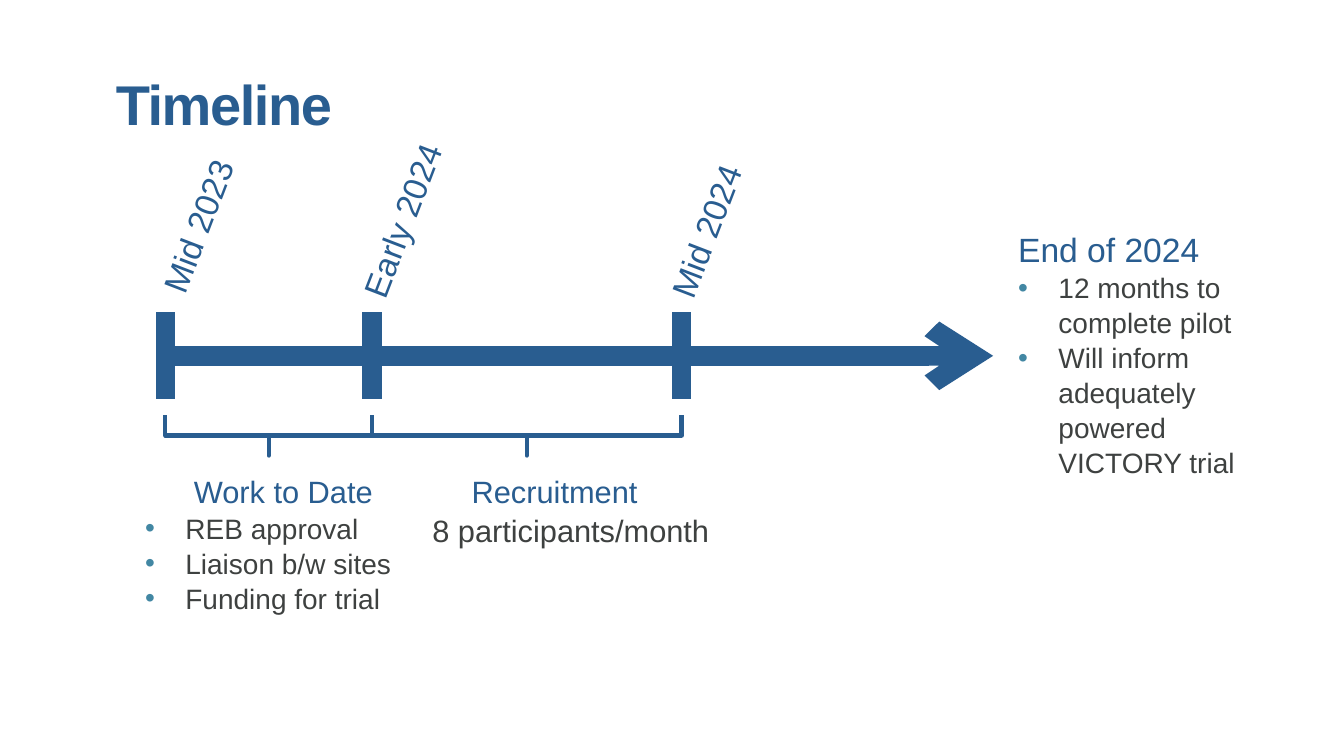
from dataclasses import dataclass

from lxml import etree
from pptx import Presentation
from pptx import util as u
from pptx.dml.color import RGBColor
from pptx.enum import shapes, text
from pptx.oxml import ns


@dataclass(frozen=True)
class Theme:
    font: str = "Arial"
    blue: str = "295D90"
    body: str = "3E4140"
    bullet: str = "4287A3"
    title_size: int = 40
    date_size: int = 24
    phase_size: int = 22
    item_size: int = 20
    axis_width: int = 14
    brace_width: int = 3
    line_spacing: float = 1.04


THEME = Theme()


def add_xml(parent, tag, **attributes):
    return etree.SubElement(parent, ns.qn(tag), attributes)


def text_frame(slide, left, top, width, height, rotation=0, wrap=True):
    box = slide.shapes.add_textbox(*map(u.Inches, (left, top, width, height)))
    box.rotation = rotation
    box.text_frame.word_wrap = wrap
    return box.text_frame


def write(frame, words, size, color=THEME.body, bold=False, bullet=False,
          indent=0, align=text.PP_ALIGN.LEFT, tracking=None):
    """Write one paragraph, using the empty first one when it is free."""
    first = frame.paragraphs[0]
    paragraph = frame.add_paragraph() if first.runs else first
    paragraph.alignment = align
    paragraph.line_spacing = THEME.line_spacing
    properties = paragraph._p.get_or_add_pPr()
    if indent:
        properties.set("marL", str(u.Inches(indent)))
    if bullet:
        properties.set("indent", str(-u.Inches(indent)))
        bullet_color = add_xml(properties, "a:buClr")
        add_xml(bullet_color, "a:srgbClr", val=THEME.bullet)
        add_xml(properties, "a:buFont", typeface=THEME.font)
        add_xml(properties, "a:buChar", char="•")
    run = paragraph.add_run()
    run.text = words
    run.font.name = THEME.font
    run.font.size = u.Pt(size)
    run.font.bold = bold
    run.font.color.rgb = RGBColor.from_string(color)
    if tracking:
        run._r.get_or_add_rPr().set("spc", str(int(tracking * 100)))


def write_items(frame, items):
    for item in items:
        write(frame, item, THEME.item_size, bullet=True, indent=0.4)


def axis_line(slide, x1, y1, x2, y2, arrow=False):
    line = slide.shapes.add_connector(
        shapes.MSO_CONNECTOR.STRAIGHT, *map(u.Inches, (x1, y1, x2, y2)))
    line.line.color.rgb = RGBColor.from_string(THEME.blue)
    line.line.width = u.Pt(THEME.axis_width)
    if arrow:
        add_xml(line.line._get_or_add_ln(), "a:tailEnd", type="arrow")
    add_xml(line._element.spPr, "a:effectLst")


def brace(slide, start, end, top, depth=0.4):
    """Draw a brace that hangs below the axis from start to end."""
    span = end - start
    left = (start + end - depth) / 2
    shape = slide.shapes.add_shape(
        shapes.MSO_SHAPE.RIGHT_BRACE,
        *map(u.Inches, (left, top + (depth - span) / 2, depth, span)))
    shape.rotation = 90
    shape.adjustments[0], shape.adjustments[1] = 0, 0.5
    shape.shadow.inherit = False
    shape.fill.background()
    shape.line.color.rgb = RGBColor.from_string(THEME.blue)
    shape.line.width = u.Pt(THEME.brace_width)


def title(slide, left, top, width, height):
    frame = text_frame(slide, left, top, width, height)
    frame.vertical_anchor = text.MSO_ANCHOR.BOTTOM
    frame.margin_bottom = u.Inches(0.04)
    write(frame, "Timeline", THEME.title_size, THEME.blue, bold=True, tracking=-1)


def timeline(slide, left, top, width, height):
    """Draw the axis, its dated ticks and the braces of the phases."""
    middle = top + height / 2
    axis_line(slide, left, middle, left + width, middle, arrow=True)

    # Ticks: date, distance along the axis, label offset, label top and width
    dates = [("Mid 2023", 0, -0.49, 1.97, 1.6),
             ("Early 2024", 2.05, -0.67, 1.85, 1.96),
             ("Mid 2024", 5.12, -0.57, 2.02, 1.6)]
    ticks = []
    for date, distance, offset, label_top, label_width in dates:
        tick = left + distance
        ticks.append(tick)
        axis_line(slide, tick, top, tick, top + height)
        label = text_frame(slide, tick + offset, label_top, label_width, 0.5,
                           rotation=291)
        write(label, date, THEME.date_size, THEME.blue)

    # One brace between each pair of ticks
    for start, end in zip(ticks, ticks[1:]):
        brace(slide, start, end, top + height + 0.16)


def work_to_date(slide, left, top, width, height):
    frame = text_frame(slide, left, top, width, height)
    write(frame, "Work to Date", THEME.phase_size, THEME.blue,
          align=text.PP_ALIGN.CENTER)
    write_items(frame, ["REB approval", "Liaison b/w sites", "Funding for trial"])


def recruitment(slide, left, top, width, height):
    frame = text_frame(slide, left, top, width, height)
    write(frame, "Recruitment", THEME.phase_size, THEME.blue, indent=0.64)
    write(frame, "8 participants/month", THEME.phase_size, indent=0.25)


def outcome(slide, left, top, width, height):
    frame = text_frame(slide, left, top, width, height)
    write(frame, "End of 2024", THEME.date_size, THEME.blue)
    write_items(frame, ["12 months to complete pilot",
                        "Will inform adequately powered VICTORY trial"])


def main():
    deck = Presentation()
    deck.slide_width, deck.slide_height = u.Inches(13.33), u.Inches(7.5)
    slide = deck.slides.add_slide(deck.slide_layouts[6])
    title(slide, 1.05, 0.61, 11.33, 0.79)
    timeline(slide, 1.64, 3.1, 8.21, 0.86)
    work_to_date(slide, 1.34, 4.63, 2.94, 1.77)
    recruitment(slide, 3.94, 4.63, 3.67, 0.63)
    outcome(slide, 10, 2.21, 2.57, 2.52)
    deck.save("out.pptx")


if __name__ == "__main__":
    main()
